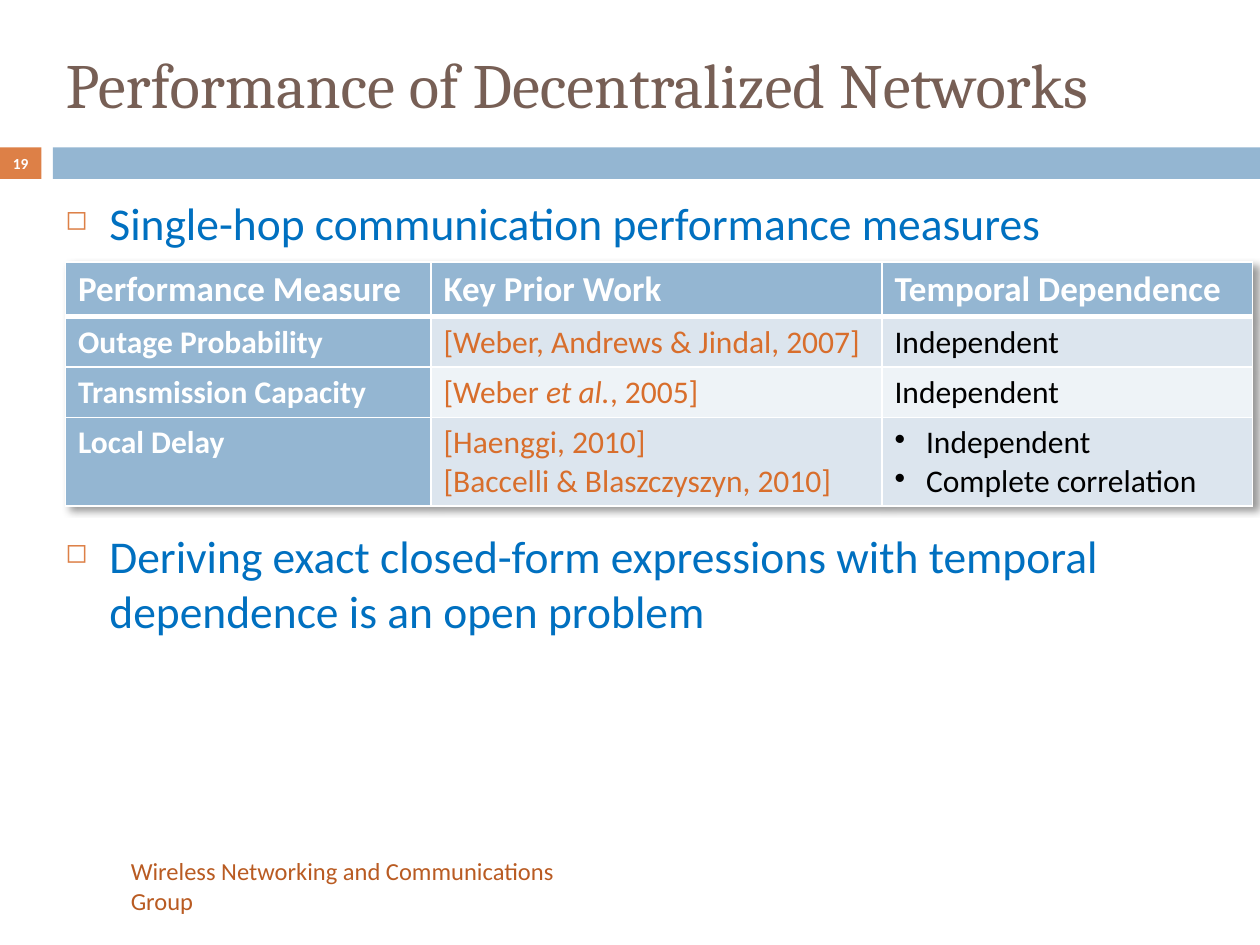
from lxml import etree
from pptx import Presentation
from pptx.dml.color import RGBColor
from pptx.enum import shapes, text
from pptx.oxml import ns
from pptx.util import Inches, Pt

ORANGE = RGBColor(0xDD, 0x80, 0x47)
STEEL = RGBColor(0x94, 0xB6, 0xD2)
BROWN = RGBColor(0x77, 0x5F, 0x55)
RUST = RGBColor(0xB9, 0x5B, 0x22)
CITATION = RGBColor(0xD8, 0x6E, 0x2C)
BLUE = RGBColor(0x00, 0x70, 0xC0)
BAND_DARK = RGBColor(0xDC, 0xE5, 0xEE)
BAND_LIGHT = RGBColor(0xEE, 0xF3, 0xF7)
WHITE = RGBColor(0xFF, 0xFF, 0xFF)
BLACK = RGBColor(0, 0, 0)

BULLETS = [
    "Single-hop communication performance measures",
    "Deriving exact closed-form expressions with temporal dependence is an open problem",
]
# Each cell is a list of lines
HEADER = [["Performance Measure"], ["Key Prior Work"], ["Temporal Dependence"]]
MEASURES = [
    [["Outage Probability"], ["[Weber, Andrews & Jindal, 2007]"], ["Independent"]],
    [["Transmission Capacity"], ["[Weber et al., 2005]"], ["Independent"]],
    [["Local Delay"], ["[Haenggi, 2010]", "[Baccelli & Blaszczyszyn, 2010]"],
     ["Independent", "Complete correlation"]],
]
COLUMN_WIDTHS = [2.9, 3.58, 2.94]
ROW_HEIGHTS = [0.41, 0.38, 0.38, 0.66]
ITALIC = "et al."


def add_element(parent, tag, **attributes):
    return etree.SubElement(parent, ns.qn(tag), {k: str(v) for k, v in attributes.items()})


def style(font, size, color, name="Calibri", bold=False):
    font.name, font.size, font.bold = name, Pt(size), bold
    font.color.rgb = color


def set_indent(para, indent):
    properties = para._p.get_or_add_pPr()
    properties.set("marL", str(indent))
    properties.set("indent", str(-indent))
    return properties


def add_bullet(para, character, indent, color=None, percent=100):
    properties = set_indent(para, indent)
    if color is not None:
        add_element(add_element(properties, "a:buClr"), "a:srgbClr", val=color)
    add_element(properties, "a:buSzPct", val=percent * 1000)
    add_element(properties, "a:buChar", char=character)


def add_block(page, left, top, width, height, fill=None, kind=shapes.MSO_SHAPE.RECTANGLE):
    block = page.shapes.add_shape(kind, left, top, width, height)
    block.shadow.inherit = False
    block.line.fill.background()
    if fill is None:
        block.fill.background()
    else:
        block.fill.solid()
        block.fill.fore_color.rgb = fill
    return block


def add_title(page, left, top, width, height):
    title = page.shapes.title
    title.left, title.top, title.width, title.height = left, top, width, height
    title.text_frame.text = "Performance of Decentralized Networks"
    title.text_frame.vertical_anchor = text.MSO_ANCHOR.MIDDLE
    para = title.text_frame.paragraphs[0]
    para.alignment = text.PP_ALIGN.LEFT
    style(para.runs[0].font, 36, BROWN, "Cambria")


def add_number_band(page, left, top, width, height):
    tab = Inches(0.33)
    gap = Inches(0.09)
    number = add_block(page, left, top, tab, height, ORANGE)
    add_block(page, left + tab + gap, top, width - tab - gap, height, STEEL)
    frame = number.text_frame
    frame.margin_left = frame.margin_right = frame.margin_top = frame.margin_bottom = 0
    frame.vertical_anchor = text.MSO_ANCHOR.MIDDLE
    frame.text = "19"
    frame.paragraphs[0].alignment = text.PP_ALIGN.CENTER
    style(frame.paragraphs[0].runs[0].font, 8.8, WHITE, bold=True)


def add_body(page, left, top, width, height):
    frame = page.shapes.add_textbox(left, top, width, height).text_frame
    frame.word_wrap = True
    frame.text = "\n".join(BULLETS)
    for para in frame.paragraphs:
        add_bullet(para, "◻", Inches(0.35), ORANGE, 60)
        style(para.runs[0].font, 26, BLUE)
    # Room for the table between the two points
    frame.paragraphs[1].space_before = Pt(159)


def add_border(cell, bottom):
    properties = cell._tc.get_or_add_tcPr()
    for position, (side, width) in enumerate([("L", 1), ("R", 1), ("T", 1), ("B", bottom)]):
        line = etree.Element(ns.qn("a:ln" + side), {"w": str(Pt(width))})
        add_element(add_element(line, "a:solidFill"), "a:srgbClr", val=WHITE)
        properties.insert(position, line)


def fill_cell(cell, lines, fill, size, color, bold):
    cell.fill.solid()
    cell.fill.fore_color.rgb = fill
    cell.text_frame.text = "\n".join(lines)
    for para, line in zip(cell.text_frame.paragraphs, lines):
        before, italic, after = line.partition(ITALIC)
        para.runs[0].text = before
        for words in filter(None, (italic, after)):
            para.add_run().text = words
        for span in para.runs:
            style(span.font, size, color, bold=bold)
            span.font.italic = span.text == ITALIC


def add_shadow(table):
    effects = etree.Element(ns.qn("a:effectLst"))
    shadow = add_element(effects, "a:outerShdw", blurRad=Pt(4), dist=Pt(3),
                         dir=2700000, algn="tl", rotWithShape=0)
    color = add_element(shadow, "a:srgbClr", val=BLACK)
    add_element(color, "a:alpha", val=40000)
    table._tbl.tblPr.insert(0, effects)


def add_measures_table(page, left, top, width, height):
    rows = [HEADER] + MEASURES
    table = page.shapes.add_table(len(rows), len(HEADER), left, top, width, height).table
    add_shadow(table)
    for column, column_width in zip(table.columns, COLUMN_WIDTHS):
        column.width = Inches(column_width)
    for row, row_height in zip(table.rows, ROW_HEIGHTS):
        row.height = Inches(row_height)
    for r, row in enumerate(rows):
        band = BAND_DARK if r % 2 else BAND_LIGHT
        for c, lines in enumerate(row):
            cell = table.cell(r, c)
            heading = r == 0 or c == 0
            color = WHITE if heading else (CITATION if c == 1 else BLACK)
            fill_cell(cell, lines, STEEL if heading else band,
                      18 if r else 20, color, heading)
            add_border(cell, 1 if r else 3)
            if len(lines) > 1:
                for para in cell.text_frame.paragraphs:
                    if c == 2:
                        add_bullet(para, "•", Inches(0.25))
                    else:
                        set_indent(para, Inches(0.25))


def add_footer(page, left, top, width, height):
    footer = add_block(page, left, top, width, height,
                       kind=shapes.MSO_SHAPE.ROUNDED_RECTANGLE)
    frame = footer.text_frame
    frame.word_wrap = True
    frame.vertical_anchor = text.MSO_ANCHOR.MIDDLE
    frame.text = "Wireless Networking and Communications Group"
    frame.paragraphs[0].alignment = text.PP_ALIGN.LEFT
    style(frame.paragraphs[0].runs[0].font, 14, RUST)


def main():
    deck = Presentation()
    deck.slide_width, deck.slide_height = Inches(10), Inches(7.5)
    page = deck.slides.add_slide(deck.slide_layouts[5])
    add_number_band(page, 0, Inches(1.17), deck.slide_width, Inches(0.25))
    add_footer(page, Inches(0.92), Inches(6.83), Inches(4.08), Inches(0.4))
    add_title(page, Inches(0.42), Inches(0.25), Inches(9.33), Inches(0.83))
    add_body(page, Inches(0.42), Inches(1.5), Inches(9.33), Inches(5.17))
    add_measures_table(page, Inches(0.52), Inches(2.08), Inches(9.42), Inches(1.83))
    deck.save("out.pptx")


if __name__ == "__main__":
    main()
